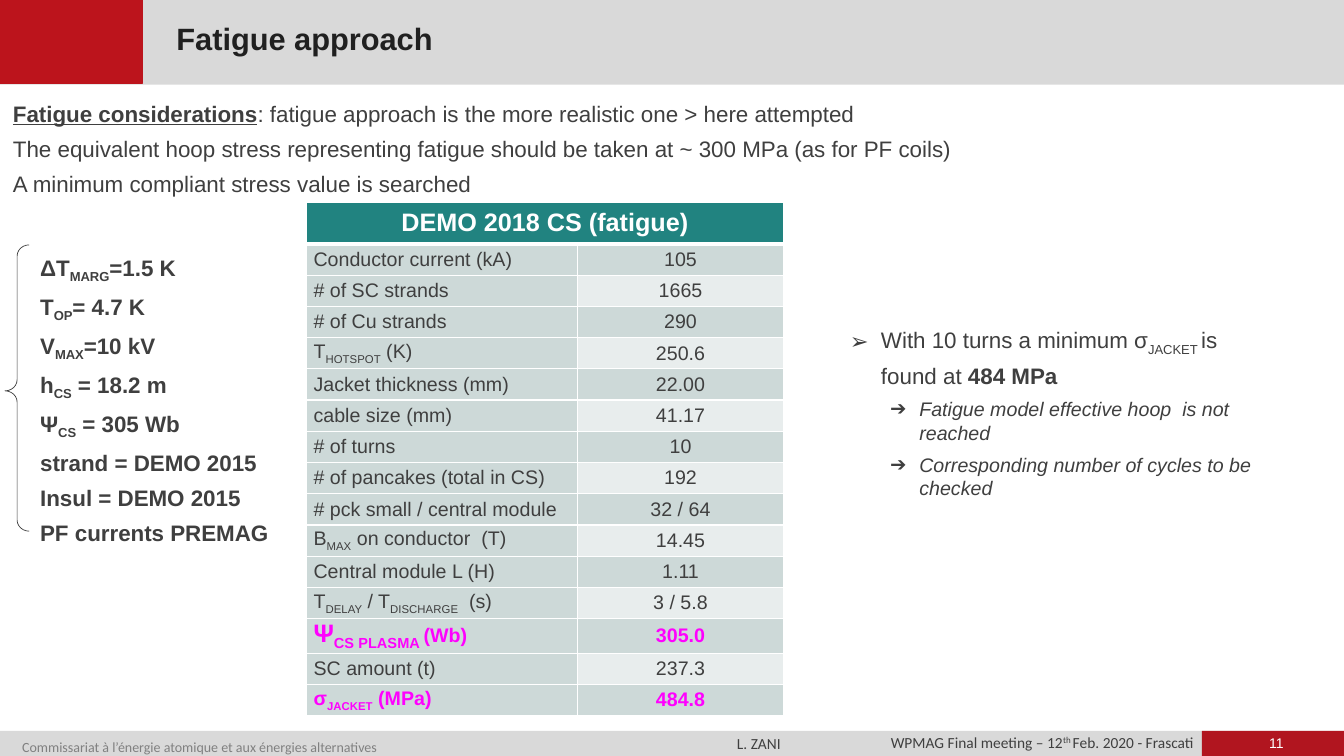
from lxml import etree
from pptx import Presentation
from pptx.dml.color import RGBColor
from pptx.enum import shapes, text
from pptx.oxml import ns
from pptx.util import Inches, Pt

# In these strings, text between a pair of underscores is subscript.
TITLE = "Fatigue approach"
INTRO = [
    [("Fatigue considerations", "bu"),
     (": fatigue approach is the more realistic one > here attempted ", "")],
    [("The equivalent hoop stress representing fatigue should be taken at "
      "~ 300 MPa (as for PF coils)", "")],
    [("A minimum compliant stress value is searched", "")],
]
INPUTS = ["ΔT_MARG_=1.5 K", "T_OP_= 4.7 K", "V_MAX_=10 kV", "h_CS_ = 18.2 m",
          "Ψ_CS_ = 305 Wb", "strand = DEMO 2015", "Insul = DEMO 2015",
          "PF currents PREMAG"]
HEAD = "DEMO 2018 CS (fatigue)"
ROWS = [
    ("Conductor current (kA)", "105"),
    ("# of SC strands", "1665"),
    ("# of Cu strands", "290"),
    ("T_HOTSPOT_ (K)", "250.6"),
    ("Jacket thickness (mm)", "22.00"),
    ("cable size (mm)", "41.17"),
    ("# of turns", "10"),
    ("# of pancakes (total in CS)", "192"),
    ("# pck small / central module", "32 / 64"),
    ("B_MAX_ on conductor  (T)", "14.45"),
    ("Central module L (H)", "1.11"),
    ("T_DELAY_ / T_DISCHARGE_  (s)", "3 / 5.8"),
    ("Ψ_CS PLASMA _(Wb)", "305.0"),
    ("SC amount (t)", "237.3"),
    ("σ_JACKET_ (MPa)", "484.8"),
]
KEYS = ("Ψ", "σ")
RESULT = [("With 10 turns a minimum σ_JACKET _is found at ", ""), ("484 MPa", "b")]
NOTES = ["Fatigue model effective hoop  is not reached",
         "Corresponding number of cycles to be checked"]
EVENT = [("WPMAG Final meeting – 12", ""), ("th ", "^"), ("Feb. 2020 - Frascati", "")]
OWNER = "Commissariat à l’énergie atomique et aux énergies alternatives"
AUTHOR = "L. ZANI"
PAGE = "11"

THEME = {
    "font": "Arial", "foot": "Calibri",
    "ink": "3F3F3F", "title": "202020", "soft": "808080", "white": "FFFFFF",
    "bar": "D9D9D9", "red": "BC141C", "dark": "B1151F", "key": "FF00FF",
    "head": "218380", "band": "CDD9D8", "pale": "E8EDED",
    "h1": 22, "h2": 18, "body": 16, "cell": 14, "note": 11, "tiny": 10,
}
ALIGN = text.PP_ALIGN


def color(name):
    return RGBColor.from_string(THEME[name])


def write(par, parts, size="body", ink="ink", font="font", marks=""):
    """Add runs; marks are b bold, i italic, u underline, ^ superscript."""
    if isinstance(parts, str):
        parts = [(parts, "")]
    for words, own in parts:
        for i, piece in enumerate(words.split("_")):
            if not piece:
                continue
            run = par.add_run()
            run.text = piece
            face = run.font
            face.name, face.size = THEME[font], Pt(THEME[size])
            face.color.rgb = color(ink)
            face.bold = "b" in marks + own
            face.italic = "i" in marks + own
            face.underline = "u" in own
            if i % 2:
                face._element.set("baseline", "-25000")
            elif "^" in own:
                face._element.set("baseline", "30000")


def rect(slide, box, fill):
    bar = slide.shapes.add_shape(shapes.MSO_SHAPE.RECTANGLE, *map(Inches, box))
    bar.shadow.inherit = False
    bar.fill.solid()
    bar.fill.fore_color.rgb = color(fill)
    bar.line.fill.background()
    return bar


def textbox(slide, box, lines, align=ALIGN.LEFT, lead=None, gap=0,
            pads=(0.1, 0.05), wrap=True, **style):
    frame = slide.shapes.add_textbox(*map(Inches, box)).text_frame
    frame.word_wrap = wrap
    frame.auto_size = text.MSO_AUTO_SIZE.SHAPE_TO_FIT_TEXT
    frame.margin_left = frame.margin_right = Inches(pads[0])
    frame.margin_top = frame.margin_bottom = Inches(pads[1])
    for i, parts in enumerate(lines):
        par = frame.add_paragraph() if i else frame.paragraphs[0]
        par.alignment, par.line_spacing = align, lead
        par.space_before = Pt(gap if i else 0)
        write(par, parts, **style)
    return frame


def bullet(par, sign, left, hang):
    props = par._p.get_or_add_pPr()
    props.set("marL", str(Inches(left)))
    props.set("indent", str(-Inches(hang)))
    etree.SubElement(props, ns.qn("a:buFont")).set("typeface", THEME["font"])
    etree.SubElement(props, ns.qn("a:buChar")).set("char", sign)


def border(cell, base=1):
    """Draw white lines on all four sides, the lower one base points wide."""
    props = cell._tc.get_or_add_tcPr()
    for i, (side, wide) in enumerate(zip("LRTB", (1, 1, 1, base))):
        line = etree.Element(ns.qn("a:ln" + side), w=str(Pt(wide)))
        fill = etree.SubElement(line, ns.qn("a:solidFill"))
        etree.SubElement(fill, ns.qn("a:srgbClr")).set("val", THEME["white"])
        props.insert(i, line)


def fill_cell(cell, words, fill, pad=0.0, align=ALIGN.CENTER, base=1, **style):
    cell.fill.solid()
    cell.fill.fore_color.rgb = color(fill)
    cell.vertical_anchor = text.MSO_ANCHOR.MIDDLE
    cell.margin_left = cell.margin_right = Inches(pad)
    cell.margin_top = cell.margin_bottom = 0
    par = cell.text_frame.paragraphs[0]
    par.alignment = align
    write(par, words, **style)
    border(cell, base)


def add_grid(slide):
    box = (3.04, 2.01, 4.73, 5.06)
    grid = slide.shapes.add_table(len(ROWS) + 1, 2, *map(Inches, box)).table
    for col, wide in zip(grid.columns, (2.69, 2.04)):
        col.width = Inches(wide)
    for i, row in enumerate(grid.rows):
        row.height = Inches(0.31 if i else 0.41)
    top = grid.cell(0, 0)
    top.merge(grid.cell(0, 1))
    fill_cell(top, HEAD, "head", 0.07, base=3, size="h2", ink="white", marks="b")
    for i, (label, value) in enumerate(ROWS, 1):
        key = label.startswith(KEYS)
        style = {"size": "cell", "ink": "key" if key else "ink",
                 "marks": "b" if key else ""}
        fill_cell(grid.cell(i, 0), label, "band", 0.07, ALIGN.LEFT, **style)
        fill_cell(grid.cell(i, 1), value, "band" if i % 2 else "pale", **style)
        if label.startswith("Ψ"):
            for run in grid.cell(i, 0).text_frame.paragraphs[0].runs[:2]:
                run.font.size = Pt(THEME["h2"])


def add_frame(slide):
    """Draw the title band and the footer."""
    rect(slide, (0, 7.25, 13.33, 0.26), "bar")
    rect(slide, (0, -0.03, 13.33, 0.87), "bar")
    rect(slide, (11.92, 7.25, 1.42, 0.26), "dark")
    block = rect(slide, (-0.01, -0.03, 1.42, 0.86), "red")
    block.line.color.rgb, block.line.width = color("red"), Pt(1)
    foot = {"pads": (0.08, 0), "font": "foot", "size": "note"}
    textbox(slide, (8.58, 7.29, 3.34, 0.17), [EVENT], ALIGN.RIGHT, 0.9, **foot)
    textbox(slide, (7.23, 7.28, 0.6, 0.19), [AUTHOR], wrap=False, **foot)
    foot["size"] = "tiny"
    textbox(slide, (0.14, 7.26, 6.03, 0.21), [OWNER], lead=1.4, ink="soft", **foot)
    foot["font"] = "font"
    textbox(slide, (12.2, 7.29, 0.92, 0.17), [PAGE], ALIGN.CENTER, ink="white", **foot)


def add_title(slide):
    title = slide.shapes.title
    title.left, title.top, title.width, title.height = map(
        Inches, (1.61, 0.21, 6.41, 0.41))
    frame = title.text_frame
    frame.vertical_anchor = text.MSO_ANCHOR.MIDDLE
    frame.margin_left = frame.margin_right = Inches(0.14)
    par = frame.paragraphs[0]
    par.alignment, par.line_spacing = ALIGN.LEFT, 0.8
    write(par, TITLE, "h1", "title", marks="b")
    slide.shapes._spTree.append(title._element)


def add_result(slide):
    frame = textbox(slide, (8.33, 3.17, 4.37, 1.86), [RESULT], lead=Pt(23))
    bullet(frame.paragraphs[0], "➢", 0.31, 0.31)
    for note in NOTES:
        par = frame.add_paragraph()
        par.level, par.space_before = 1, Pt(6)
        bullet(par, "➔", 0.69, 0.29)
        write(par, note, "cell", marks="i")


def main():
    deck = Presentation()
    deck.slide_width, deck.slide_height = Inches(13.33), Inches(7.5)
    slide = deck.slides.add_slide(deck.slide_layouts[5])
    add_frame(slide)
    add_title(slide)
    textbox(slide, (0.03, 0.86, 13.12, 1.15), INTRO, ALIGN.JUSTIFY, Pt(25))
    add_grid(slide)
    textbox(slide, (0.3, 2.47, 2.64, 2.84), INPUTS, gap=6, marks="b")
    brace = slide.shapes.add_shape(
        shapes.MSO_SHAPE.LEFT_BRACE, *map(Inches, (0.05, 2.43, 0.24, 2.84)))
    brace.shadow.inherit = False
    brace.fill.background()
    brace.line.color.rgb, brace.line.width = color("ink"), Pt(0.5)
    brace.adjustments[0], brace.adjustments[1] = 0.46, 0.51
    add_result(slide)
    deck.save("out.pptx")


if __name__ == "__main__":
    main()
